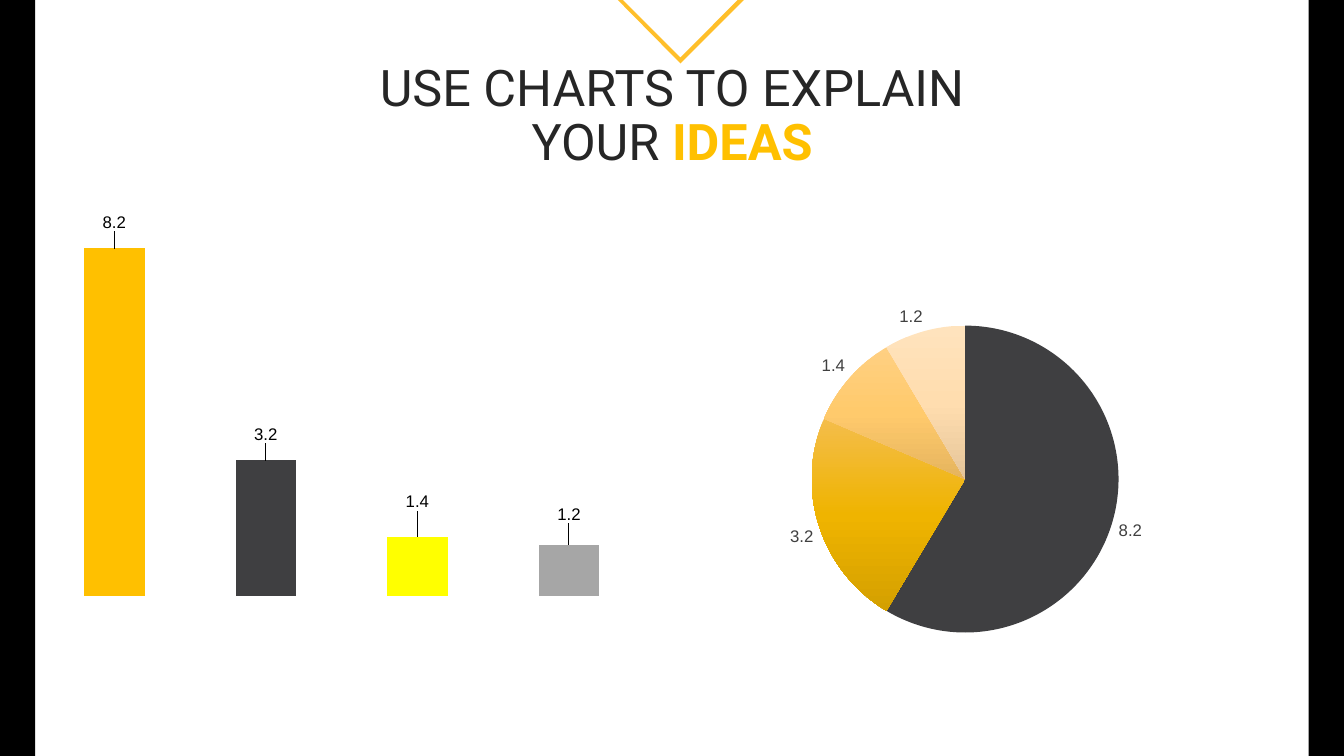
"""Builds a slide with a column chart and a pie chart under a centred title."""
import copy

import pptx
import pptx.chart.data
import pptx.dml.color
import pptx.enum.chart
import pptx.enum.shapes
import pptx.enum.text
import pptx.oxml
import pptx.oxml.ns
import pptx.util
from pptx.util import Cm

SLIDE_SIZE = (33.87, 19.05)
BORDER_WIDTH = 0.89
CHEVRON = [(15.57, 0), (15.7, 0), (17.15, 1.45), (18.59, 0), (18.75, 0), (17.15, 1.6)]
TITLE_BOX = (8.71, 1.12, 16.46, 3.45)
TITLE = [("USE CHARTS TO EXPLAIN YOUR ", "262626", False), ("IDEAS", "FFC000", True)]
CATEGORIES = ["1", "2", "3", "4"]
VALUES = [8.2, 3.2, 1.4, 1.2]
COLUMN_BOX = (0.94, 4.37, 15.37, 10.82)
COLUMN_COLORS = ["FFC000", "3F3F41", "FFFF00", "A6A6A6"]
COLUMN_LABEL_LIFTS = [-0.03, -0.03, -0.05, -0.04]
PIE_BOX = (18.06, 7.37, 12.55, 8.71)
PIE_COLORS = [
    ["3F3F41"],
    ["F4BD4B", "EFB400", "D4A000"],
    ["FFD082", "FFCA6C", "E5B45E"],
    ["FFE3BD", "FFDDAF", "E5C599"],
]
PLOT_AREA = {"x": 0.002, "y": 0.096, "w": 0.994, "h": 0.888}


def rgb(color):
    return pptx.dml.color.RGBColor.from_string(color)


def style_font(font, size, color, name, bold=False):
    font.size, font.name, font.bold = pptx.util.Pt(size), name, bold
    font.color.rgb = rgb(color)


def add_text(paragraph, text, **style):
    run = paragraph.add_run()
    run.text = text
    style_font(run.font, **style)


def paint(shape, color):
    shape.shadow.inherit = False
    shape.fill.solid()
    shape.fill.fore_color.rgb = rgb(color)
    shape.line.fill.background()


def manual_layout(modes, fractions):
    tags = "".join(f'<c:{tag} val="{value}"/>' for tag, value in [*modes, *fractions.items()])
    namespace = pptx.oxml.ns.nsdecls("c")
    return pptx.oxml.parse_xml(
        f"<c:layout {namespace}><c:manualLayout>{tags}</c:manualLayout></c:layout>")


def fill_point(point, colors):
    fill = point.format.fill
    if len(colors) == 1:
        fill.solid()
        fill.fore_color.rgb = rgb(colors[0])
        return
    fill.gradient()
    fill.gradient_angle = 270


def fill_gradients(chart, points, point_colors):
    for stop_list in chart.element.iter(pptx.oxml.ns.qn("a:gsLst")):
        stop_list.append(copy.deepcopy(stop_list[0]))
    for point, colors in zip(points, point_colors):
        if len(colors) > 1:
            for index, stop in enumerate(point.format.fill.gradient_stops):
                stop.position = index / (len(colors) - 1)
                stop.color.rgb = rgb(colors[index])


def add_value_chart(slide, kind, box, point_colors, label_color):
    data = pptx.chart.data.CategoryChartData()
    data.categories = CATEGORIES
    data.add_series("Series 1", VALUES)
    chart = slide.shapes.add_chart(kind, *map(Cm, box), data).chart
    chart.has_legend = chart.has_title = False
    style_font(chart.font, size=10, color="000000", name="Arial")

    area = chart.element.find(".//" + pptx.oxml.ns.qn("c:plotArea"))
    for layout in area.findall(pptx.oxml.ns.qn("c:layout")):
        area.remove(layout)
    modes = [("layoutTarget", "inner"), ("xMode", "edge"), ("yMode", "edge")]
    area.insert(0, manual_layout(modes, PLOT_AREA))

    plot = chart.plots[0]
    plot.vary_by_categories = False
    plot.has_data_labels = True
    points = [plot.series[0].points[index] for index in range(len(VALUES))]
    for point, colors in zip(points, point_colors):
        fill_point(point, colors)
    fill_gradients(chart, points, point_colors)
    labels = plot.series[0].data_labels
    labels.show_value = True
    labels.position = pptx.enum.chart.XL_LABEL_POSITION.OUTSIDE_END
    style_font(labels.font, size=12, color=label_color, name="Arial")
    return chart, points


def lift_labels(chart, points):
    for point in points:
        style_font(point.data_label.font, size=12, color="000000", name="Arial")
        point.data_label.position = pptx.enum.chart.XL_LABEL_POSITION.OUTSIDE_END
    labels = chart.element.iter(pptx.oxml.ns.qn("c:dLbl"))
    for label, lift in zip(list(labels), COLUMN_LABEL_LIFTS):
        label.insert(1, manual_layout([], {"x": 0, "y": lift}))


def main():
    deck = pptx.Presentation()
    width, height = SLIDE_SIZE
    deck.slide_width, deck.slide_height = Cm(width), Cm(height)
    slide = deck.slides.add_slide(deck.slide_layouts[5])

    outline = slide.shapes.build_freeform(*map(Cm, CHEVRON[0]), scale=1.0)
    outline.add_line_segments([(Cm(x), Cm(y)) for x, y in CHEVRON[1:]], close=True)
    paint(outline.convert_to_shape(), "FFBF2A")
    for left in (0, width - BORDER_WIDTH):
        border = slide.shapes.add_shape(
            pptx.enum.shapes.MSO_SHAPE.RECTANGLE, Cm(left), 0, Cm(BORDER_WIDTH), Cm(height))
        paint(border, "000000")

    title = slide.shapes.title
    title.left, title.top, title.width, title.height = map(Cm, TITLE_BOX)
    frame = title.text_frame
    frame.word_wrap = True
    frame.auto_size = pptx.enum.text.MSO_AUTO_SIZE.NONE
    frame.vertical_anchor = pptx.enum.text.MSO_ANCHOR.BOTTOM
    frame.margin_left = frame.margin_right = Cm(0.25)
    frame.margin_top = frame.margin_bottom = Cm(0.25)
    heading = frame.paragraphs[0]
    heading.alignment = pptx.enum.text.PP_ALIGN.CENTER
    heading.line_spacing = 0.9
    for text, color, bold in TITLE:
        add_text(heading, text, size=36, color=color, name="Roboto", bold=bold)

    kinds = pptx.enum.chart.XL_CHART_TYPE
    columns, bars = add_value_chart(
        slide, kinds.COLUMN_CLUSTERED, COLUMN_BOX, [[color] for color in COLUMN_COLORS], "000000")
    columns.plots[0].gap_width = 150
    columns.value_axis.minimum_scale, columns.value_axis.maximum_scale = 0, 9
    columns.value_axis.has_major_gridlines = False
    columns.value_axis.visible = columns.category_axis.visible = False
    lift_labels(columns, bars)
    add_value_chart(slide, kinds.PIE, PIE_BOX, PIE_COLORS, "404040")

    deck.save("out.pptx")


if __name__ == "__main__":
    main()
